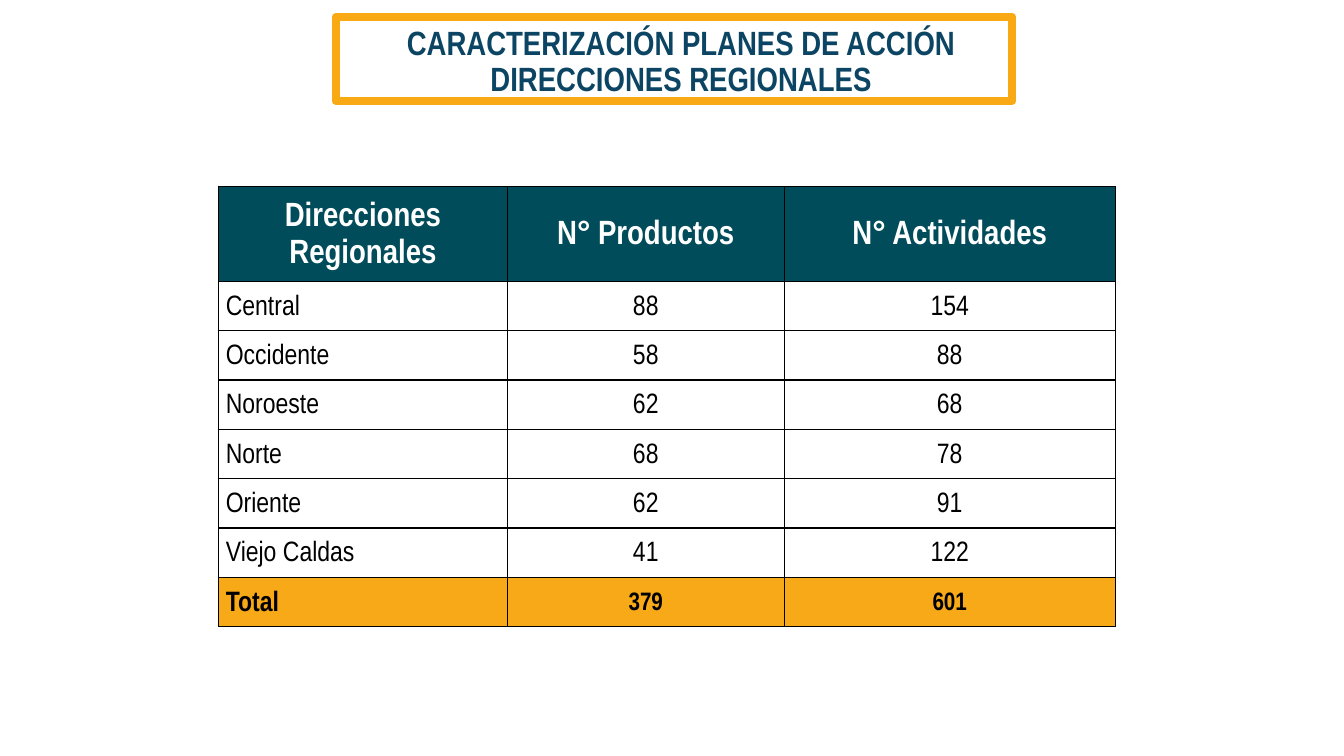
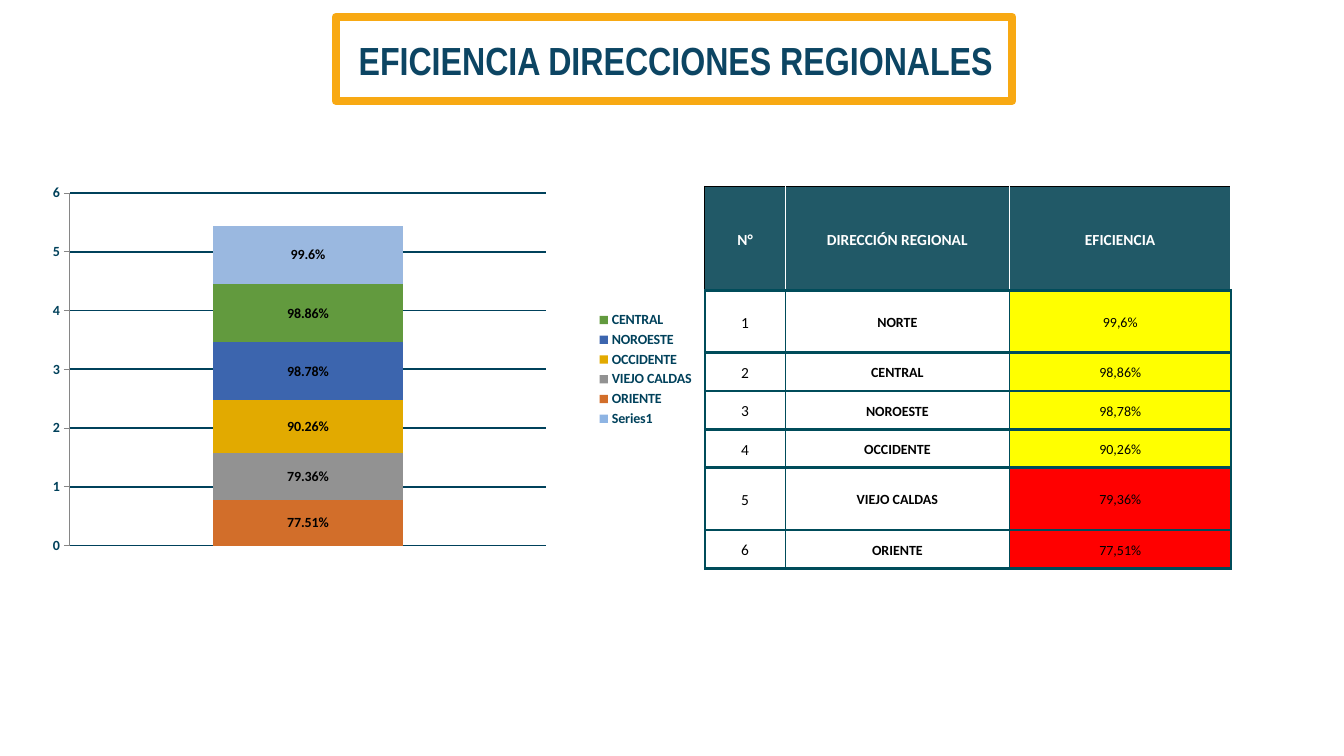
from dataclasses import dataclass

from lxml import etree
from pptx import Presentation
from pptx.chart.data import CategoryChartData
from pptx.dml.color import RGBColor
from pptx.enum.chart import XL_CHART_TYPE as ChartType
from pptx.enum.chart import XL_LABEL_POSITION as LabelPosition
from pptx.enum.chart import XL_LEGEND_POSITION as LegendPosition
from pptx.enum.chart import XL_TICK_MARK as TickMark
from pptx.enum.shapes import MSO_SHAPE as Shape
from pptx.enum.text import MSO_ANCHOR as Anchor
from pptx.enum.text import MSO_AUTO_SIZE as AutoSize
from pptx.enum.text import PP_ALIGN as Align
from pptx.oxml.ns import qn
from pptx.util import Inches, Pt

NAVY = RGBColor(0x0C, 0x45, 0x63)
AXIS_BLUE = RGBColor(0x00, 0x41, 0x5B)
TEAL = RGBColor(0x00, 0x4C, 0x5A)
SLATE = RGBColor(0x21, 0x59, 0x67)
ORANGE = RGBColor(0xF8, 0xA9, 0x13)
TOTAL_ORANGE = RGBColor(0xF7, 0xA9, 0x17)
YELLOW = RGBColor(0xFF, 0xFF, 0x00)
RED = RGBColor(0xFF, 0x00, 0x00)
BLACK = RGBColor(0x00, 0x00, 0x00)
WHITE = RGBColor(0xFF, 0xFF, 0xFF)
GRAY = RGBColor(0x86, 0x86, 0x86)

NARROW = "Arial Narrow"
CALIBRI = "Calibri"


@dataclass(frozen=True)
class Edge:
    color: RGBColor
    width: float = 1


@dataclass(frozen=True)
class Borders:
    left: Edge
    right: Edge
    top: Edge
    bottom: Edge


@dataclass(frozen=True)
class CellStyle:
    borders: Borders
    size: float
    font: str
    color: RGBColor = BLACK
    bold: bool = False
    align: Align = Align.CENTER
    fill: RGBColor | None = None
    margin: float = 0.05


@dataclass(frozen=True)
class Segment:
    name: str
    value: float | None
    color: RGBColor
    label_format: str = "0.00%"


@dataclass(frozen=True)
class Ranking:
    name: str
    efficiency: str
    fill: RGBColor


SEGMENTS = [
    Segment("Series1", None, RGBColor(0x8E, 0xB4, 0xE3)),
    Segment("ORIENTE", 0.7751, RGBColor(0xD2, 0x6E, 0x2A)),
    Segment("VIEJO CALDAS", 0.7936, RGBColor(0x92, 0x92, 0x92)),
    Segment("OCCIDENTE", 0.9026, RGBColor(0xE2, 0xAA, 0x00)),
    Segment("NOROESTE", 0.9878, RGBColor(0x3C, 0x65, 0xAE)),
    Segment("CENTRAL", 0.9886, RGBColor(0x62, 0x9A, 0x3E)),
    Segment("NORTE", 0.996, RGBColor(0x9A, 0xB8, 0xE0), "0.0%"),
]

RANKINGS = [
    Ranking("NORTE", "99,6%", YELLOW),
    Ranking("CENTRAL", "98,86%", YELLOW),
    Ranking("NOROESTE", "98,78%", YELLOW),
    Ranking("OCCIDENTE", "90,26%", YELLOW),
    Ranking("VIEJO CALDAS", "79,36%", RED),
    Ranking("ORIENTE", "77,51%", RED),
]

PLANS = [
    ("Central", 88, 154),
    ("Occidente", 58, 88),
    ("Noroeste", 62, 68),
    ("Norte", 68, 78),
    ("Oriente", 62, 91),
    ("Viejo Caldas", 41, 122),
]


def write_text(frame, text: str, *, size: float, font: str, color: RGBColor,
               bold: bool = False, align: Align = Align.CENTER, spacing: float = 1.0) -> None:
    para = frame.paragraphs[0]
    para.alignment = align
    para.line_spacing = spacing
    para.space_before = Pt(0)
    span = para.add_run()
    span.text = text
    span.font.name = font
    span.font.size = Pt(size)
    span.font.bold = bold
    span.font.color.rgb = color


def add_titled_page(deck, title: str, *, left: float, top: float, width: float, size: float):
    """Add a page with the orange title frame and its title."""
    page = deck.slides.add_slide(deck.slide_layouts[5])
    band = page.shapes.add_shape(Shape.RECTANGLE, Inches(3.33), Inches(0.17),
                                 Inches(6.71), Inches(0.83))
    band.shadow.inherit = False
    band.fill.background()
    band.line.color.rgb = ORANGE
    band.line.width = Pt(6)

    box = page.shapes.title
    box.left, box.top = Inches(left), Inches(top)
    box.width, box.height = Inches(width), Inches(0.55)
    frame = box.text_frame
    frame.word_wrap = True
    frame.auto_size = AutoSize.NONE
    frame.vertical_anchor = Anchor.TOP
    write_text(frame, title, size=size, font=NARROW, color=NAVY, bold=True, spacing=0.9)
    return page


def set_borders(cell, borders: Borders) -> None:
    properties = cell._tc.get_or_add_tcPr()
    edges = {"a:lnL": borders.left, "a:lnR": borders.right,
             "a:lnT": borders.top, "a:lnB": borders.bottom}
    for tag, edge in edges.items():
        line = etree.SubElement(properties, qn(tag), w=str(Pt(edge.width)))
        fill = etree.SubElement(line, qn("a:solidFill"))
        etree.SubElement(fill, qn("a:srgbClr"), val=str(edge.color))


def fill_cell(cell, text: str, style: CellStyle) -> None:
    set_borders(cell, style.borders)
    if style.fill is None:
        cell.fill.background()
    else:
        cell.fill.solid()
        cell.fill.fore_color.rgb = style.fill
    cell.vertical_anchor = Anchor.MIDDLE
    cell.margin_left = cell.margin_right = Inches(style.margin)
    cell.margin_top = cell.margin_bottom = 0
    write_text(cell.text_frame, text, size=style.size, font=style.font, color=style.color,
               bold=style.bold, align=style.align, spacing=1.15)


def add_grid(page, left: float, top: float, columns: list[float], heights: list[float],
             rows: list[list[tuple[str, CellStyle]]]) -> None:
    """Add a table whose rows hold (text, style) pairs."""
    table = page.shapes.add_table(len(heights), len(columns), Inches(left), Inches(top),
                                  Inches(sum(columns)), Inches(sum(heights))).table
    table.first_row = table.horz_banding = False
    for column, width in zip(table.columns, columns):
        column.width = Inches(width)
    for row, height, entries in zip(table.rows, heights, rows):
        row.height = Inches(height)
        for cell, (text, style) in zip(row.cells, entries):
            fill_cell(cell, text, style)


def add_plans_table(page) -> None:
    thin = Edge(BLACK)
    box = Borders(thin, thin, thin, thin)
    header = CellStyle(box, 24, NARROW, WHITE, bold=True, fill=TEAL, margin=0.07)
    name = CellStyle(box, 20, NARROW, align=Align.JUSTIFY, margin=0.07)
    number = CellStyle(box, 20, NARROW, margin=0.07)
    total_name = CellStyle(box, 20, NARROW, bold=True, align=Align.JUSTIFY,
                           fill=TOTAL_ORANGE, margin=0.07)
    total = CellStyle(box, 18, NARROW, bold=True, fill=TOTAL_ORANGE)

    titles = ["Direcciones Regionales", "N° Productos", "N° Actividades"]
    rows = [[(title, header) for title in titles]]
    for region, products, activities in PLANS:
        rows.append([(region, name), (str(products), number), (str(activities), number)])
    rows.append([("Total", total_name),
                 (str(sum(plan[1] for plan in PLANS)), total),
                 (str(sum(plan[2] for plan in PLANS)), total)])
    add_grid(page, 2.17, 1.85, [2.86, 2.75, 3.28], [0.94] + [0.49] * 7, rows)


def add_ranking_table(page) -> None:
    black, white, teal = Edge(BLACK), Edge(WHITE), Edge(TEAL)
    thick = Edge(TEAL, 2.25)
    header_sides = [(black, white), (white, white), (white, Edge(WHITE, 1.5))]
    titles = ["N°", "DIRECCIÓN REGIONAL", "EFICIENCIA"]
    rows = [[(title, CellStyle(Borders(left, right, black, thick), 11, CALIBRI, WHITE,
                               bold=True, fill=SLATE))
             for title, (left, right) in zip(titles, header_sides)]]

    inner = Borders(teal, teal, thick, thick)
    place = CellStyle(Borders(Edge(TEAL, 1.5), teal, thick, thick), 11, CALIBRI)
    name = CellStyle(inner, 10, CALIBRI, bold=True)
    for number, ranking in enumerate(RANKINGS, start=1):
        efficiency = CellStyle(inner, 10, CALIBRI, fill=ranking.fill)
        rows.append([(str(number), place), (ranking.name, name),
                     (ranking.efficiency, efficiency)])
    add_grid(page, 6.99, 1.85, [0.8, 2.22, 2.2],
             [1.03, 0.62, 0.38, 0.38, 0.38, 0.62, 0.38], rows)


def place_plot(chart, x: float, y: float, w: float, h: float) -> None:
    """Fix the inner plot area as fractions of the chart."""
    area = chart._chartSpace.chart.plotArea
    for old in area.findall(qn("c:layout")):
        area.remove(old)
    layout = etree.Element(qn("c:layout"))
    area.insert(0, layout)
    manual = etree.SubElement(layout, qn("c:manualLayout"))
    settings = {"layoutTarget": "inner", "xMode": "edge", "yMode": "edge",
                "x": x, "y": y, "w": w, "h": h}
    for tag, value in settings.items():
        etree.SubElement(manual, qn(f"c:{tag}"), val=str(value))


def hide_legend_entry(legend, index: int) -> None:
    entry = etree.Element(qn("c:legendEntry"))
    etree.SubElement(entry, qn("c:idx"), val=str(index))
    etree.SubElement(entry, qn("c:delete"), val="1")
    legend._element.find(qn("c:legendPos")).addnext(entry)


def format_font(font, color: RGBColor, bold: bool = True) -> None:
    font.name = CALIBRI
    font.size = Pt(10)
    font.bold = bold
    font.color.rgb = color


def add_efficiency_chart(page) -> None:
    data = CategoryChartData()
    data.categories = ["1"]
    for segment in SEGMENTS:
        data.add_series(segment.name, [segment.value])
    chart = page.shapes.add_chart(ChartType.COLUMN_STACKED, Inches(0.43), Inches(1.48),
                                  Inches(6.56), Inches(4.37), data).chart
    chart.has_title = False
    format_font(chart.font, BLACK, bold=False)
    place_plot(chart, 0.04, 0.1, 0.72, 0.8)

    plot = chart.plots[0]
    plot.gap_width, plot.overlap = 150, 100
    plot.vary_by_categories = False
    for series, segment in zip(plot.series, SEGMENTS):
        series.format.fill.solid()
        series.format.fill.fore_color.rgb = segment.color
        if segment.value is not None:
            labels = series.data_labels
            labels.show_value = True
            labels.number_format = segment.label_format
            labels.number_format_is_linked = False
            labels.position = LabelPosition.CENTER
            format_font(labels.font, BLACK)

    chart.category_axis.visible = False
    axis = chart.value_axis
    axis.minimum_scale, axis.maximum_scale, axis.major_unit = 0, 6, 1
    axis.major_tick_mark = TickMark.OUTSIDE
    axis.format.line.color.rgb = GRAY
    format_font(axis.tick_labels.font, AXIS_BLUE)
    grid_line = axis.major_gridlines.format.line
    grid_line.color.rgb = AXIS_BLUE
    grid_line.width = Pt(1.25)

    chart.has_legend = True
    chart.legend.position = LegendPosition.RIGHT
    chart.legend.include_in_layout = False
    format_font(chart.legend.font, AXIS_BLUE)
    hide_legend_entry(chart.legend, len(SEGMENTS) - 1)


def main() -> None:
    deck = Presentation()
    deck.slide_width, deck.slide_height = Inches(13.33), Inches(7.5)

    plans_page = add_titled_page(deck, "CARACTERIZACIÓN PLANES DE ACCIÓN DIRECCIONES REGIONALES",
                                 left=3.28, top=0.21, width=6.95, size=24)
    add_plans_table(plans_page)

    efficiency_page = add_titled_page(deck, "EFICIENCIA DIRECCIONES REGIONALES",
                                      left=3.13, top=0.36, width=7.14, size=28)
    add_efficiency_chart(efficiency_page)
    add_ranking_table(efficiency_page)
    deck.save("out.pptx")


if __name__ == "__main__":
    main()
